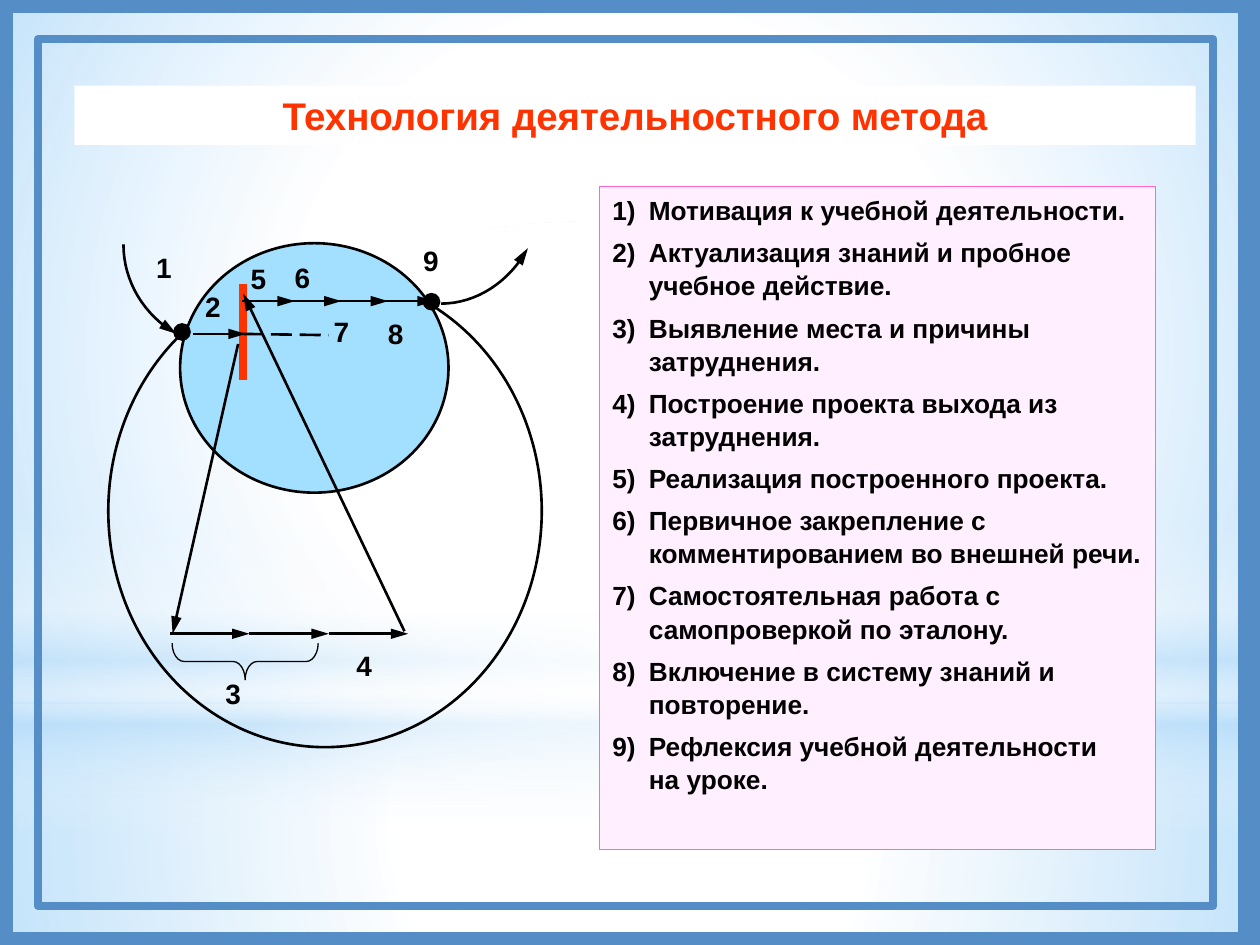
from lxml.etree import SubElement
from pptx import Presentation
from pptx.dml.color import RGBColor
from pptx.enum.dml import MSO_LINE
from pptx.enum.shapes import MSO_CONNECTOR, MSO_SHAPE
from pptx.enum.text import MSO_ANCHOR, MSO_AUTO_SIZE, PP_ALIGN
from pptx.oxml.ns import qn
from pptx.util import Inches, Pt

W, H = 10, 7.5
BLACK, RED, FRAME = "000000", "FF3300", "558EC7"
WHITE, SKY = "FFFFFF", "B4DCFA"

TITLE = "Технология деятельностного метода"
STEPS = [
    "Мотивация к учебной деятельности.",
    "Актуализация знаний и пробное учебное действие.",
    "Выявление места и причины затруднения.",
    "Построение проекта выхода из затруднения.",
    "Реализация построенного проекта.",
    "Первичное закрепление с комментированием во внешней речи.",
    "Самостоятельная работа с самопроверкой по эталону.",
    "Включение в систему знаний и повторение.",
    "Рефлексия учебной деятельности\vна уроке.",
]

# Gradient stops: position %, colour, opacity %; angle None means radial
BACKDROP = [
    (MSO_SHAPE.RECTANGLE, (0, 5.58, W, 1.92), None,
     [(0, WHITE, 91), (37, WHITE, 76), (100, SKY, 79)]),
    (MSO_SHAPE.RECTANGLE, (0, 0, W, 5.58), None,
     [(0, WHITE, 89), (48, WHITE, 62), (100, SKY, 79)]),
    (MSO_SHAPE.RECTANGLE, (0, 4.12, W, 2.5), 90,
     [(0, WHITE, 0), (29, WHITE, 30), (45, SKY, 40), (55, WHITE, 26),
      (65, SKY, 60), (100, WHITE, 0)]),
    (MSO_SHAPE.OVAL, (0, 1.75, W, 5.58), None, [(0, WHITE, 100), (56, WHITE, 0)]),
]
FRAMES = [((0, 0, 9.93, H), 15), ((0.3, 0.31, 9.33, 6.88), 4.5)]

# Box, fill, line width
CIRCLES = [
    ((0.86, 2.18, 3.44, 3.75), None, 1.5),
    ((1.43, 1.93, 2.13, 1.98), "A3E0FF", 1.5),
    ((3.36, 2.33, 0.13, 0.13), BLACK, 0.75),
    ((1.38, 2.57, 0.13, 0.13), BLACK, 0.75),
]
LOWER_CHAIN = [(1.35 + 0.63 * i, 5.03, 1.98 + 0.63 * i, 5.03) for i in range(3)]
UPPER_CHAIN = [(1.92 + 0.37 * i, 2.39, 2.34 + 0.37 * i, 2.39) for i in range(4)]
ARROWS = [(1.53, 2.65, 1.95, 2.65), *LOWER_CHAIN, *UPPER_CHAIN,
          (1.89, 2.73, 1.37, 5.03), (3.21, 5.01, 1.93, 2.33)]
BARRIER = (1.93, 2.25, 1.93, 3.02)
DASHES = (1.92, 2.65, 2.61, 2.66)
BRACE = (1.8, 4.67, 0.29, 1.16)
# Cubic curves: start, two control points, end
ENTRY = [(0.98, 1.94), (0.98, 2.23), (1.14, 2.5), (1.4, 2.65)]
EXIT = [(3.5, 2.41), (3.78, 2.41), (4.04, 2.24), (4.19, 1.97)]
LABELS = {"1": (1.14, 1.94), "2": (1.53, 2.25), "3": (1.69, 5.32),
          "4": (2.73, 5.1), "5": (1.89, 2.03), "6": (2.24, 2.02),
          "7": (2.55, 2.45), "8": (2.98, 2.46), "9": (3.26, 1.88)}


def rgb(color):
    return RGBColor.from_string(color)


def style(sp, fill=None, line=None, width=1):
    if fill:
        sp.fill.solid()
        sp.fill.fore_color.rgb = rgb(fill)
    else:
        sp.fill.background()
    if line:
        sp.line.color.rgb = rgb(line)
        sp.line.width = Pt(width)
    else:
        sp.line.fill.background()


def add_shape(s, kind, box, **look):
    sp = s.shapes.add_shape(kind, *map(Inches, box))
    sp.shadow.inherit = False
    style(sp, **look)
    return sp


def set_gradient(sp, stops, angle):
    sp.fill.gradient()
    grad = sp.element.spPr.find(qn("a:gradFill"))
    for child in list(grad):
        grad.remove(child)
    gs_list = SubElement(grad, qn("a:gsLst"))
    for pos, color, opacity in stops:
        gs = SubElement(gs_list, qn("a:gs"), pos=str(pos * 1000))
        clr = SubElement(gs, qn("a:srgbClr"), val=color)
        SubElement(clr, qn("a:alpha"), val=str(opacity * 1000))
    if angle is None:
        path = SubElement(grad, qn("a:path"), {"path": "circle"})
        SubElement(path, qn("a:fillToRect"), {side: "50000" for side in "ltrb"})
    else:
        SubElement(grad, qn("a:lin"), ang=str(angle * 60000), scaled="0")


def add_arrowhead(sp):
    SubElement(sp.line._get_or_add_ln(), qn("a:tailEnd"), type="triangle", w="med", len="lg")


def add_line(s, ends, color=BLACK, width=1.5):
    ln = s.shapes.add_connector(MSO_CONNECTOR.STRAIGHT, *map(Inches, ends))
    ln.line.color.rgb = rgb(color)
    ln.line.width = Pt(width)
    SubElement(ln.element.spPr, qn("a:effectLst"))
    return ln


def add_curve_arrow(s, ctrl, n=16):
    """Trace a cubic curve in n short segments and put an arrowhead at its end."""
    points = []
    for t in (i / n for i in range(n + 1)):
        weights = ((1 - t) ** 3, 3 * t * (1 - t) ** 2, 3 * t * t * (1 - t), t ** 3)
        points.append(tuple(Inches(sum(w * c[axis] for w, c in zip(weights, ctrl)))
                            for axis in (0, 1)))
    builder = s.shapes.build_freeform(*points[0])
    builder.add_line_segments(points[1:], close=False)
    sp = builder.convert_to_shape()
    sp.shadow.inherit = False
    style(sp, line=BLACK, width=1.5)
    add_arrowhead(sp)


def write(p, text, size, color=BLACK):
    p.text = text
    look = {"name": "Arial", "size": Pt(size), "bold": True}
    for r in p.runs:
        for key, value in look.items():
            setattr(r.font, key, value)
        r.font.color.rgb = rgb(color)


def place(ph, box, anchor):
    """Move a placeholder to its box, in front of everything drawn so far."""
    ph.left, ph.top, ph.width, ph.height = map(Inches, box)
    ph.text_frame.auto_size = MSO_AUTO_SIZE.NONE
    ph.text_frame.vertical_anchor = anchor
    ph.element.getparent().append(ph.element)
    return ph.text_frame


def add_backdrop(s):
    for kind, box, angle, stops in BACKDROP:
        set_gradient(add_shape(s, kind, box), stops, angle)
    for box, width in FRAMES:
        add_shape(s, MSO_SHAPE.RECTANGLE, box, line=FRAME, width=width)


def add_texts(s):
    title, body = s.placeholders
    style(title, fill=WHITE)
    p = place(title, (0.59, 0.68, 8.9, 0.47), MSO_ANCHOR.MIDDLE).paragraphs[0]
    p.alignment = PP_ALIGN.CENTER
    write(p, TITLE, 22, RED)

    style(body, fill="FFEFFF", line="FF66CC", width=0.75)
    tf = place(body, (4.76, 1.48, 4.41, 5.26), MSO_ANCHOR.TOP)
    spacing = {"space_before": Pt(0), "space_after": Pt(5.25), "line_spacing": 1.05}
    for n, step in enumerate(STEPS, 1):
        p = tf.paragraphs[0] if n == 1 else tf.add_paragraph()
        write(p, f"{n})\t{step}", 15)
        for key, value in spacing.items():
            setattr(p, key, value)
        pPr = p._p.get_or_add_pPr()
        pPr.set("marL", str(Inches(0.29)))
        pPr.set("indent", str(-Inches(0.29)))
        SubElement(pPr, qn("a:buNone"))


def add_diagram(s):
    for box, fill, width in CIRCLES:
        add_shape(s, MSO_SHAPE.OVAL, box, fill=fill, line=BLACK, width=width)
    add_line(s, BARRIER, RED, 4.5)
    add_line(s, DASHES).line.dash_style = MSO_LINE.LONG_DASH
    for ends in ARROWS:
        add_arrowhead(add_line(s, ends))
    for ctrl in (ENTRY, EXIT):
        add_curve_arrow(s, ctrl)
    brace = add_shape(s, MSO_SHAPE.RIGHT_BRACE, BRACE, line=BLACK, width=0.75)
    brace.rotation = 90
    brace.adjustments[0] = 0.33
    for text, (x, y) in LABELS.items():
        tf = s.shapes.add_textbox(*map(Inches, (x, y, 0.66, 0.59))).text_frame
        tf.word_wrap = True
        write(tf.paragraphs[0], text, 16)


def main():
    prs = Presentation()
    prs.slide_width, prs.slide_height = Inches(W), Inches(H)
    s = prs.slides.add_slide(prs.slide_layouts[1])
    add_backdrop(s)
    add_texts(s)
    add_diagram(s)
    prs.save("out.pptx")


if __name__ == "__main__":
    main()
